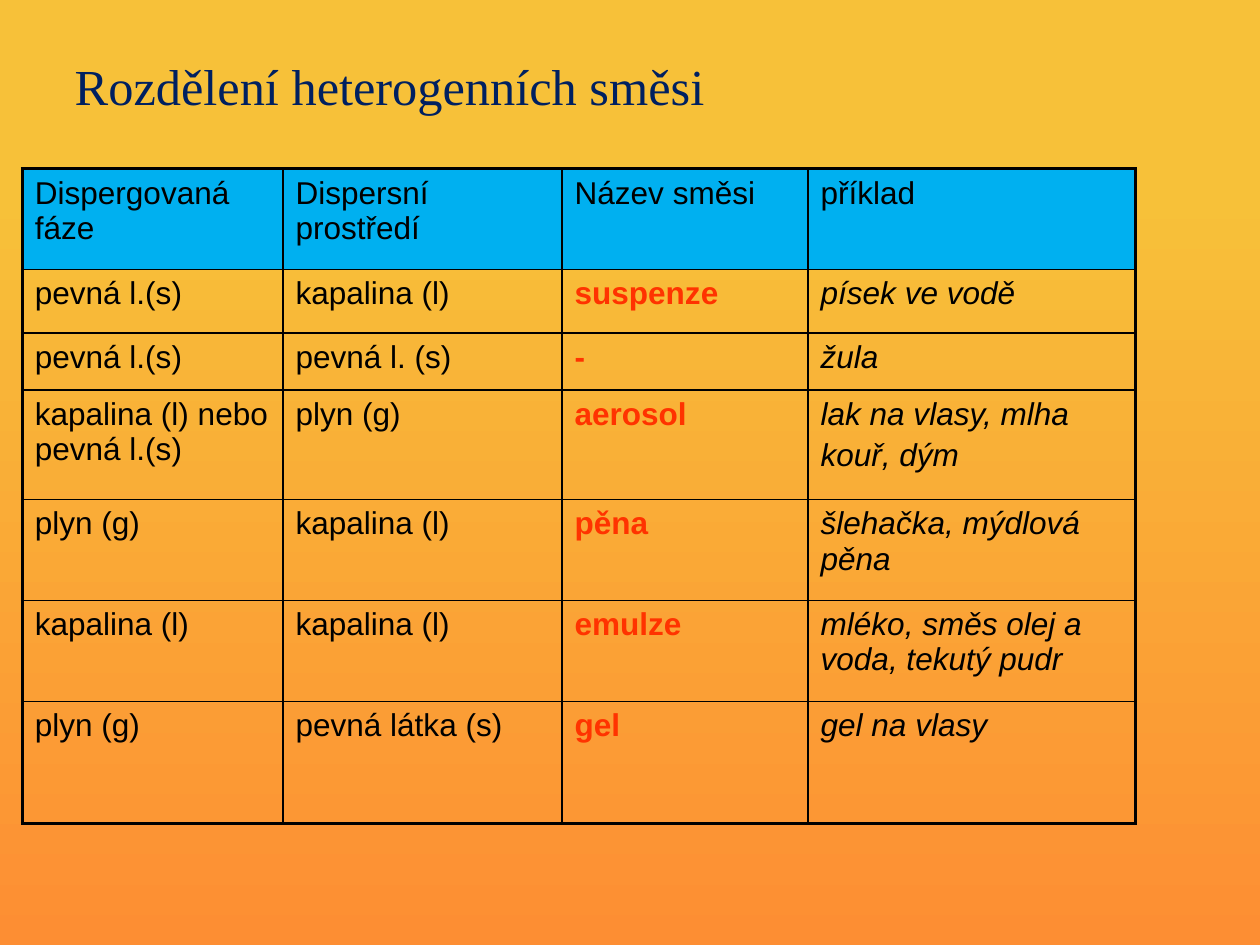
from pptx import Presentation
from pptx.dml.color import RGBColor
from pptx.enum.text import MSO_ANCHOR, PP_ALIGN
from pptx.oxml.ns import qn
from pptx.util import Cm, Pt
from lxml.etree import SubElement as add_sub

NAVY = RGBColor(0x00, 0x20, 0x60)
BLACK = RGBColor(0x00, 0x00, 0x00)
RED = RGBColor(0xFF, 0x33, 0x00)
BLUE = RGBColor(0x00, 0xB0, 0xF0)
GOLD = RGBColor(0xF7, 0xC1, 0x39)
ORANGE = RGBColor(0xFD, 0x8E, 0x33)

THIN, THICK = Pt(1), Pt(2.25)
WIDTHS = [5.84, 6.25, 5.51, 7.34]
HEIGHTS = [2.26, 1.42, 1.27, 2.46, 2.26, 2.26, 2.74]
ROWS = [
    ["Dispergovaná fáze", "Dispersní prostředí", "Název směsi", "příklad"],
    ["pevná l.(s)", "kapalina (l)", "suspenze", "písek ve vodě"],
    ["pevná l.(s)", "pevná l. (s)", "-", "žula"],
    ["kapalina (l) nebo pevná l.(s)", "plyn (g)", "aerosol",
     "lak na vlasy, mlha\nkouř, dým"],
    ["plyn (g)", "kapalina (l)", "pěna", "šlehačka, mýdlová pěna"],
    ["kapalina (l)", "kapalina (l)", "emulze",
     "mléko, směs olej a voda, tekutý pudr"],
    ["plyn (g)", "pevná látka (s)", "gel", "gel na vlasy"],
]


def add_border(cell, side, width):
    props = cell._tc.get_or_add_tcPr()
    line = add_sub(props, qn("a:ln" + side), w=str(width))
    fill = add_sub(line, qn("a:solidFill"))
    add_sub(fill, qn("a:srgbClr"), val=str(BLACK))


prs = Presentation()
prs.slide_width, prs.slide_height = Cm(28.22), Cm(21.16)
slide = prs.slides.add_slide(prs.slide_layouts[5])

back = slide.background.fill
back.gradient()
back.gradient_angle = 270
for stop, place, color in zip(back.gradient_stops, [0.2, 1], [GOLD, ORANGE]):
    stop.position = place
    stop.color.rgb = color

title = slide.shapes.title
title.left, title.top = Cm(1.42), Cm(0.84)
title.width, title.height = Cm(25.4), Cm(2.13)
frame = title.text_frame
frame.text = "Rozdělení heterogenních směsi"
frame.vertical_anchor = MSO_ANCHOR.MIDDLE
head = frame.paragraphs[0]
head.alignment = PP_ALIGN.LEFT
head.font.name = "Times New Roman"
head.font.size = Pt(32)
head.font.color.rgb = NAVY

table = slide.shapes.add_table(
    len(ROWS), len(WIDTHS), Cm(0.5), Cm(3.78),
    Cm(sum(WIDTHS)), Cm(sum(HEIGHTS))).table
table.first_row = table.horz_banding = False
for col, width in zip(table.columns, WIDTHS):
    col.width = Cm(width)
for row, height in zip(table.rows, HEIGHTS):
    row.height = Cm(height)

for r, texts in enumerate(ROWS):
    for c, text in enumerate(texts):
        cell = table.cell(r, c)
        cell.text = text
        cell.margin_left = cell.margin_right = Cm(0.28)
        cell.margin_top = cell.margin_bottom = Cm(0.15)
        edges = {"L": c == 0, "R": c == len(WIDTHS) - 1,
                 "T": r == 0, "B": r == len(ROWS) - 1}
        for side, outer in edges.items():
            add_border(cell, side, THICK if outer else THIN)
        if r == 0:
            cell.fill.solid()
            cell.fill.fore_color.rgb = BLUE
        else:
            cell.fill.background()
        for para in cell.text_frame.paragraphs:
            para.space_before = Pt(4)
            font = para.font
            font.name = "Arial"
            font.size = Pt(20)
            font.bold = r > 0 and c == 2
            font.italic = r > 0 and c == 3
            font.color.rgb = RED if font.bold else BLACK

prs.save("out.pptx")
